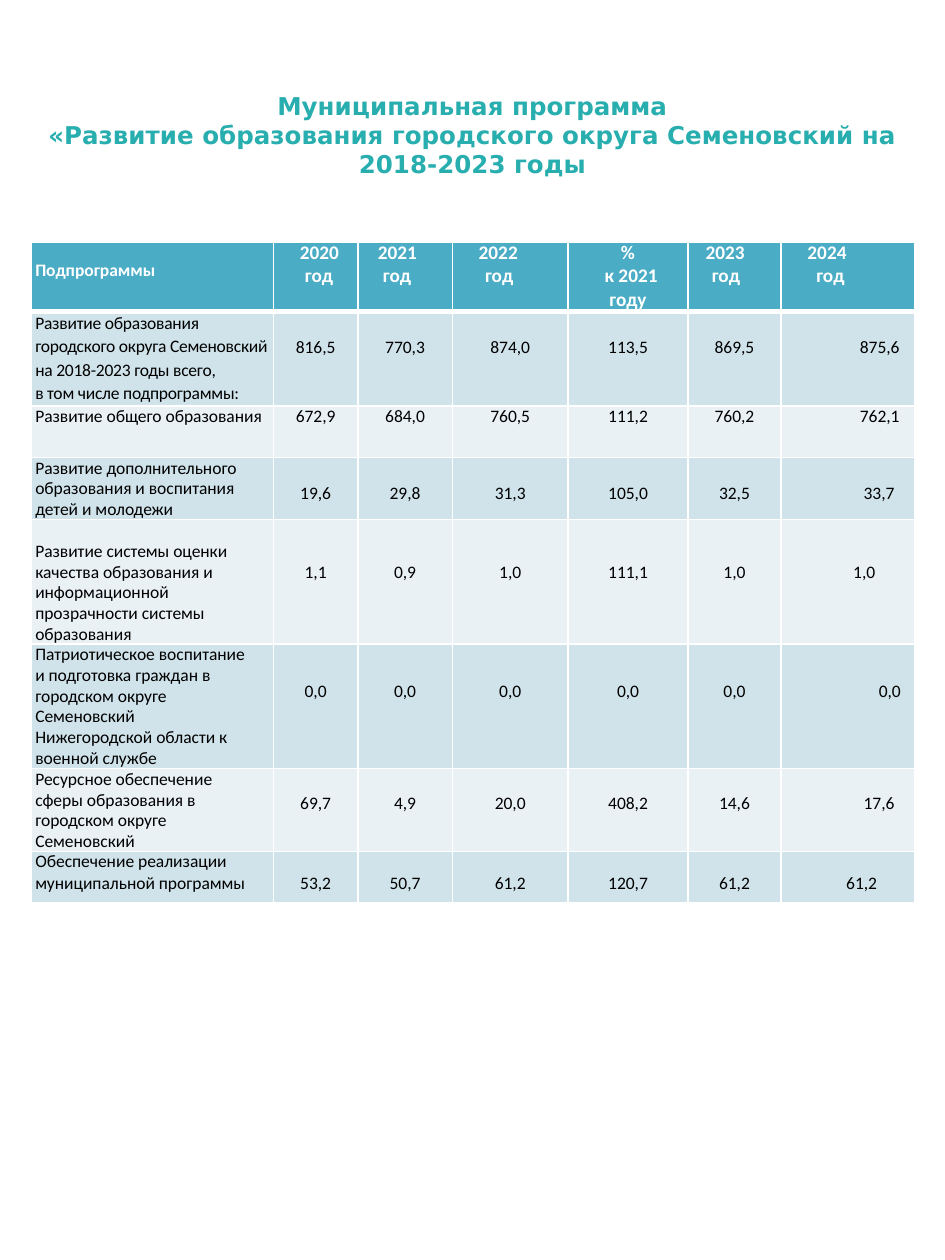
from typing import NamedTuple

from lxml import etree
from pptx import Presentation
from pptx.dml.color import RGBColor
from pptx.enum.text import MSO_AUTO_SIZE, PP_ALIGN
from pptx.oxml.ns import qn
from pptx.util import Inches, Pt

LEFT, CENTER, RIGHT = PP_ALIGN.LEFT, PP_ALIGN.CENTER, PP_ALIGN.RIGHT
GROW = MSO_AUTO_SIZE.SHAPE_TO_FIT_TEXT

COLORS = {
    "title": "28AEAF",
    "header": "4BACC6",
    "odd": "D0E3EA",
    "even": "E9F1F5",
    "white": "FFFFFF",
    "black": "000000",
}
TITLE_FONT = {"name": "DejaVu Sans", "size": Pt(14), "bold": True}
HEADER_FONT = {"name": "Calibri", "size": Pt(11), "bold": True}
LABEL_HEADER_FONT = {**HEADER_FONT, "size": Pt(10)}
BODY_FONT = {"name": "Calibri", "size": Pt(10), "bold": False}
COLUMN_WIDTHS = [1.92, 0.67, 0.75, 0.92, 0.95, 0.74, 1.06]
LABEL_INDENT = 0.03
HEADER_HEIGHT = 0.55


class Line(NamedTuple):
    text: str
    indent: float = 0
    align: PP_ALIGN = LEFT
    spacing: object = None
    tracking: int = 0  # hundredths of a point


class Program(NamedTuple):
    height: float
    label: list[str]
    values: list[str]
    value_top: float
    label_top: float = 0
    label_right: float = 0
    spacing: object = 0.98
    tracking: int = 0
    last_align: PP_ALIGN = RIGHT
    last_left: float = 0
    last_right: float = 0.12


HEADERS = [
    [Line("2020", 0.21), Line("год", 0.25)],
    [Line("2021", 0.16), Line("год", 0.2)],
    [Line("2022", 0.21), Line("год", 0.26)],
    [Line("%", 0, CENTER), Line("к 2021", 0.05, CENTER), Line("году", 0, CENTER)],
    [Line("2023", 0.14), Line("год", 0.19)],
    [Line("2024", 0.21), Line("год", 0.28)],
]
PROGRAMS = [
    Program(0.75, ["Развитие образования городского округа Семеновский на 2018-2023 годы всего,",
                   "в том числе подпрограммы:"],
            ["816,5", "770,3", "874,0", "113,5", "869,5", "875,6"], 0.2,
            spacing=Pt(13.2), tracking=-10),
    Program(0.41, ["Развитие общего образования"],
            ["672,9", "684,0", "760,5", "111,2", "760,2", "762,1"], 0, spacing=1.0),
    Program(0.49, ["Развитие дополнительного", "образования и воспитания детей и молодежи"],
            ["19,6", "29,8", "31,3", "105,0", "32,5", "33,7"], 0.2,
            label_right=0.2, last_right=0.16),
    Program(0.98, ["Развитие системы оценки качества образования и информационной "
                   "прозрачности системы образования"],
            ["1,1", "0,9", "1,0", "111,1", "1,0", "1,0"], 0.34, label_top=0.17,
            label_right=0.2, last_align=CENTER, last_left=0.26, last_right=0),
    Program(0.99, ["Патриотическое воспитание и подготовка граждан в городском округе Семеновский",
                   "Нижегородской области к военной службе"],
            ["0,0", "0,0", "0,0", "0,0", "0,0", "0,0"], 0.29,
            label_right=0.2, last_right=0.11),
    Program(0.65, ["Ресурсное обеспечение сферы образования в городском округе Семеновский"],
            ["69,7", "4,9", "20,0", "408,2", "14,6", "17,6"], 0.19,
            label_right=0.2, last_right=0.16),
    Program(0.41, ["Обеспечение реализации", "муниципальной программы"],
            ["53,2", "50,7", "61,2", "120,7", "61,2", "61,2"], 0.17, spacing=Pt(12.1),
            last_align=CENTER, last_left=0.22, last_right=0),
]


def format_font(font, settings: dict, color: str) -> None:
    for attribute, value in settings.items():
        setattr(font, attribute, value)
    font.color.rgb = RGBColor.from_string(COLORS[color])


def set_borders(cell, bottom: float) -> None:
    """Draw white cell edges; the bottom width is in points. Call before filling."""
    properties = cell._tc.get_or_add_tcPr()
    for edge, width in (("lnL", 1), ("lnR", 1), ("lnT", 1), ("lnB", bottom)):
        border = etree.SubElement(properties, qn(f"a:{edge}"), w=str(Pt(width)))
        fill = etree.SubElement(border, qn("a:solidFill"))
        etree.SubElement(fill, qn("a:srgbClr"), val=COLORS["white"])


def write_cell(cell, lines: list[Line], font: dict, color: str, fill: str,
               top: float = 0, left: float = 0, right: float = 0, bottom_border: float = 1) -> None:
    set_borders(cell, bottom_border)
    cell.fill.solid()
    cell.fill.fore_color.rgb = RGBColor.from_string(COLORS[fill])
    margins = {"margin_top": top, "margin_left": left, "margin_right": right, "margin_bottom": 0}
    for attribute, value in margins.items():
        setattr(cell, attribute, Inches(value))
    frame = cell.text_frame
    for index, line in enumerate(lines):
        paragraph = frame.add_paragraph() if index else frame.paragraphs[0]
        paragraph.alignment = line.align
        paragraph.line_spacing = line.spacing
        if line.indent:
            paragraph._p.get_or_add_pPr().set("marL", str(Inches(line.indent)))
        run = paragraph.add_run()
        run.text = line.text
        format_font(run.font, font, color)
        if line.tracking:
            run._r.get_or_add_rPr().set("spc", str(line.tracking))


def write_header(cells) -> None:
    write_cell(cells[0], [Line("Подпрограммы", LABEL_INDENT)], LABEL_HEADER_FONT,
               "white", "header", top=0.14, bottom_border=3)
    for cell, lines in zip(list(cells)[1:], HEADERS):
        write_cell(cell, [line._replace(spacing=Pt(13.2)) for line in lines],
                   HEADER_FONT, "white", "header", bottom_border=3)


def write_program(cells, program: Program, fill: str) -> None:
    label = [Line(text, LABEL_INDENT, LEFT, program.spacing, program.tracking)
             for text in program.label]
    write_cell(cells[0], label, BODY_FONT, "black", fill,
               top=program.label_top, right=program.label_right)
    *values, last = program.values
    for cell, value in zip(list(cells)[1:], values):
        write_cell(cell, [Line(value, align=CENTER)], BODY_FONT, "black", fill,
                   top=program.value_top)
    write_cell(cells[len(COLUMN_WIDTHS) - 1], [Line(last, align=program.last_align)],
               BODY_FONT, "black", fill, program.value_top,
               program.last_left, program.last_right)


def add_title(slide) -> None:
    title = slide.shapes.add_textbox(Inches(0), Inches(0.67), Inches(7.5), Inches(0.81))
    frame = title.text_frame
    frame.word_wrap = True
    frame.auto_size = GROW
    paragraph = frame.paragraphs[0]
    paragraph.text = ("Муниципальная программа\v"
                      "«Развитие образования городского округа Семеновский на 2018-2023 годы")
    paragraph.alignment = CENTER
    for run in paragraph.runs:
        format_font(run.font, TITLE_FONT, "title")


def add_program_table(slide) -> None:
    heights = [HEADER_HEIGHT] + [program.height for program in PROGRAMS]
    table = slide.shapes.add_table(
        len(heights), len(COLUMN_WIDTHS), Inches(0.25), Inches(1.92),
        Inches(sum(COLUMN_WIDTHS)), Inches(sum(heights))).table
    for column, width in zip(table.columns, COLUMN_WIDTHS):
        column.width = Inches(width)
    for row, height in zip(table.rows, heights):
        row.height = Inches(height)
    write_header(table.rows[0].cells)
    for index, program in enumerate(PROGRAMS, 1):
        write_program(table.rows[index].cells, program, "odd" if index % 2 else "even")


def main() -> None:
    presentation = Presentation()
    presentation.slide_width = Inches(7.5)
    presentation.slide_height = Inches(10)
    slide = presentation.slides.add_slide(presentation.slide_layouts[6])
    add_title(slide)
    add_program_table(slide)
    presentation.save("out.pptx")


if __name__ == "__main__":
    main()
